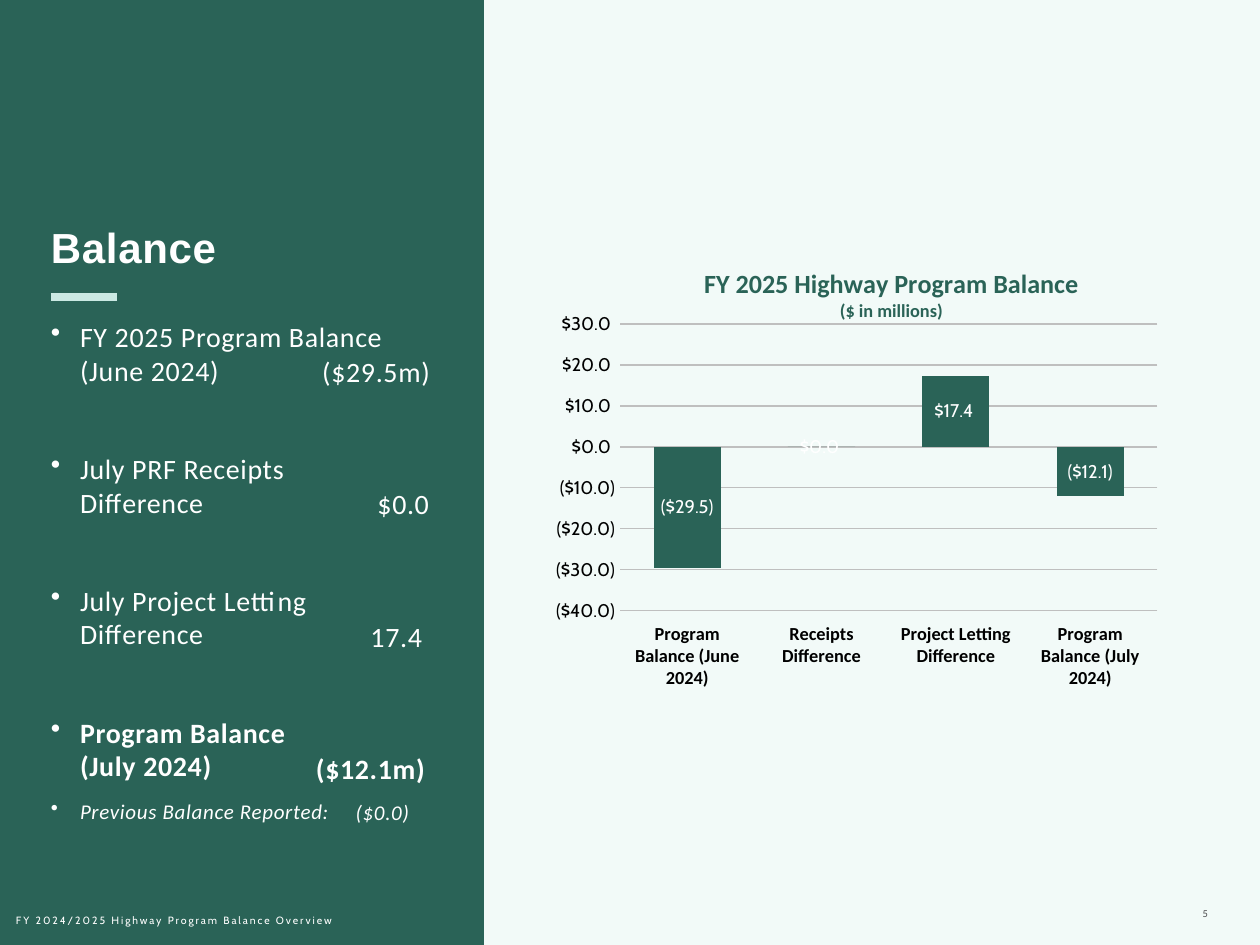
"""Build the highway program balance slide."""
from lxml import etree
from pptx import Presentation
from pptx.chart.data import CategoryChartData
from pptx.dml.color import RGBColor
from pptx.enum.chart import XL_CHART_TYPE, XL_LABEL_POSITION, XL_TICK_LABEL_POSITION, XL_TICK_MARK
from pptx.enum.shapes import MSO_CONNECTOR, MSO_SHAPE
from pptx.enum.text import MSO_ANCHOR, PP_ALIGN
from pptx.oxml.ns import qn
from pptx.util import Pt

COLUMN = XL_CHART_TYPE.COLUMN_CLUSTERED
CENTER = XL_LABEL_POSITION.CENTER
LOW = XL_TICK_LABEL_POSITION.LOW
NONE = XL_TICK_MARK.NONE
RECT, LINE = MSO_SHAPE.RECTANGLE, MSO_CONNECTOR.STRAIGHT
TOP, MIDDLE, BOTTOM = MSO_ANCHOR.TOP, MSO_ANCHOR.MIDDLE, MSO_ANCHOR.BOTTOM
LEFT, RIGHT = PP_ALIGN.LEFT, PP_ALIGN.RIGHT
PX = 914400 // 126
MONEY = '"$"#,##0.0_);\\("$"#,##0.0\\)'
THEME = {
    "green": RGBColor(0x2A, 0x63, 0x57), "mint": RGBColor(0xCB, 0xE9, 0xE3),
    "pale": RGBColor(0xF2, 0xFA, 0xF8), "white": RGBColor(0xFF, 0xFF, 0xFF),
    "black": RGBColor(0, 0, 0), "gray": RGBColor(0x4D, 0x4D, 0x4F),
    "grid": RGBColor(0xBF, 0xBF, 0xBF),
    "head": 24, "body": 16, "note": 12, "foot": 6, "title": 15, "label": 10.5,
    "sans": "Arial", "text": "Calibri", "num": "Cabin",
}


def style(font, size, color, face, bold=False, italic=False):
    font.size, font.name = Pt(THEME[size]), THEME[face]
    font.bold, font.italic = bold, italic
    font.color.rgb = THEME[color]


def add_box(x, y, w, h, anchor=TOP):
    frame = slide.shapes.add_textbox(x * PX, y * PX, w * PX, h * PX).text_frame
    frame.word_wrap = True
    frame.vertical_anchor = anchor
    frame.margin_left = frame.margin_right = frame.margin_top = frame.margin_bottom = 0
    return frame


prs = Presentation()
prs.slide_width, prs.slide_height = 1260 * PX, 945 * PX
slide = prs.slides.add_slide(prs.slide_layouts[6])
slide.background.fill.solid()
slide.background.fill.fore_color.rgb = THEME["pale"]

panel = slide.shapes.add_shape(RECT, 0, 0, 484 * PX, 945 * PX)
panel.shadow.inherit = False
panel.fill.solid()
panel.fill.fore_color.rgb = THEME["green"]
panel.line.fill.background()

small = [
    ("5", 1086, 876, 122, 44, BOTTOM, RIGHT, "gray", "text"),
    ("FY 2024/2025 Highway Program Balance Overview", 16, 901, 330, 38, MIDDLE, LEFT, "white", "num"),
]
for words, x, y, w, h, anchor, align, color, face in small:
    para = add_box(x, y, w, h, anchor).paragraphs[0]
    para.alignment = align
    run = para.add_run()
    run.text = words
    style(run.font, "foot", color, face)
    run.font._element.set("spc", "110")

body = add_box(51, 222, 383, 608)
head = body.paragraphs[0]
head.space_after = Pt(18)
run = head.add_run()
run.text = "Balance"
style(run.font, "head", "white", "sans", True)
run.font._element.set("spc", "40")

rows = [
    (["FY 2025 Program Balance", "(June 2024)"], "($29.5m)", 430, 355, 9, "body", False, False),
    (["July PRF Receipts", "Difference"], "$0.0", 429, 487, 37, "body", False, False),
    (["July Project Letting", "Difference"], "17.4", 422, 620, 37, "body", False, False),
    (["Program Balance", "(July 2024)"], "($12.1m)", 425, 752, 37, "body", True, False),
    (["Previous Balance Reported:"], "($0.0)", 409, 800, 9, "note", False, True),
]
for lines, amount, end, y, gap, size, bold, italic in rows:
    item = body.add_paragraph()
    item.space_before = Pt(gap)
    props = item._p.get_or_add_pPr()
    props.set("marL", str(29 * PX))
    props.set("indent", str(-29 * PX))
    etree.SubElement(props, qn("a:buChar"), char="•")
    value = add_box(end - 120, y, 120, 34).paragraphs[0]
    value.alignment = RIGHT
    for para, words in [(item, line) for line in lines] + [(value, amount)]:
        if para.runs:
            para.add_line_break()
        run = para.add_run()
        run.text = words
        style(run.font, size, "white", "text", bold, italic)
        run.font._element.set("spc", "40")

rule = slide.shapes.add_connector(LINE, 51 * PX, 297 * PX, 117 * PX, 297 * PX)
rule.line.color.rgb = THEME["mint"]
rule.line.width = Pt(4.5)
etree.SubElement(rule._element.spPr, qn("a:effectLst"))

data = CategoryChartData()
data.categories = ["Program Balance (June 2024)", "Receipts Difference",
                   "Project Letting Difference", "Program Balance (July 2024)"]
data.add_series("Series 1", (-29.5, 0, 17.4, -12.1))
chart = slide.shapes.add_chart(COLUMN, 556 * PX, 258 * PX, 620 * PX, 441 * PX, data).chart
chart.has_legend = False
style(chart.font, "label", "black", "num")

title = chart.chart_title.text_frame
first, second = title.paragraphs[0], title.add_paragraph()
for para, words, size in [(first, "FY 2025 Highway Program Balance", "title"),
                          (second, "($ in millions)", "label")]:
    run = para.add_run()
    run.text = words
    style(run.font, size, "green", "text", True)
chart.chart_title.include_in_layout = False

plot = chart.plots[0]
plot.gap_width, plot.overlap = 100, -24
plot.vary_by_categories = False
bars = plot.series[0]
bars.invert_if_negative = False
bars.format.fill.solid()
bars.format.fill.fore_color.rgb = THEME["green"]
labels = bars.data_labels
labels.show_value = True
labels.position = CENTER
labels.number_format, labels.number_format_is_linked = MONEY, False
style(labels.font, "label", "white", "num")

cats, vals = chart.category_axis, chart.value_axis
for axis, face, bold in [(cats, "text", True), (vals, "num", False)]:
    axis.major_tick_mark = axis.minor_tick_mark = NONE
    style(axis.tick_labels.font, "label", "black", face, bold)
cats.tick_label_position = LOW
vals.minimum_scale, vals.maximum_scale, vals.major_unit = -40, 30, 10
vals.tick_labels.number_format, vals.tick_labels.number_format_is_linked = MONEY, False
vals.format.line.fill.background()
for line in (cats.format.line, vals.major_gridlines.format.line):
    line.color.rgb = THEME["grid"]
    line.width = Pt(0.75)

area = chart._chartSpace.chart.plotArea
heading = chart.chart_title._element
for part, spot in [
    (area, {"layoutTarget": "inner", "xMode": "edge", "yMode": "edge",
            "x": 0.1, "y": 0.15, "w": 0.87, "h": 0.65}),
    (heading, {"xMode": "edge", "yMode": "edge", "x": 0.23, "y": 0.01}),
]:
    for old in part.findall(qn("c:layout")):
        part.remove(old)
    layout = etree.Element(qn("c:layout"))
    manual = etree.SubElement(layout, qn("c:manualLayout"))
    for key, val in spot.items():
        etree.SubElement(manual, qn("c:" + key), val=str(val))
    part.insert(0 if part is area else 1, layout)

prs.save("out.pptx")
